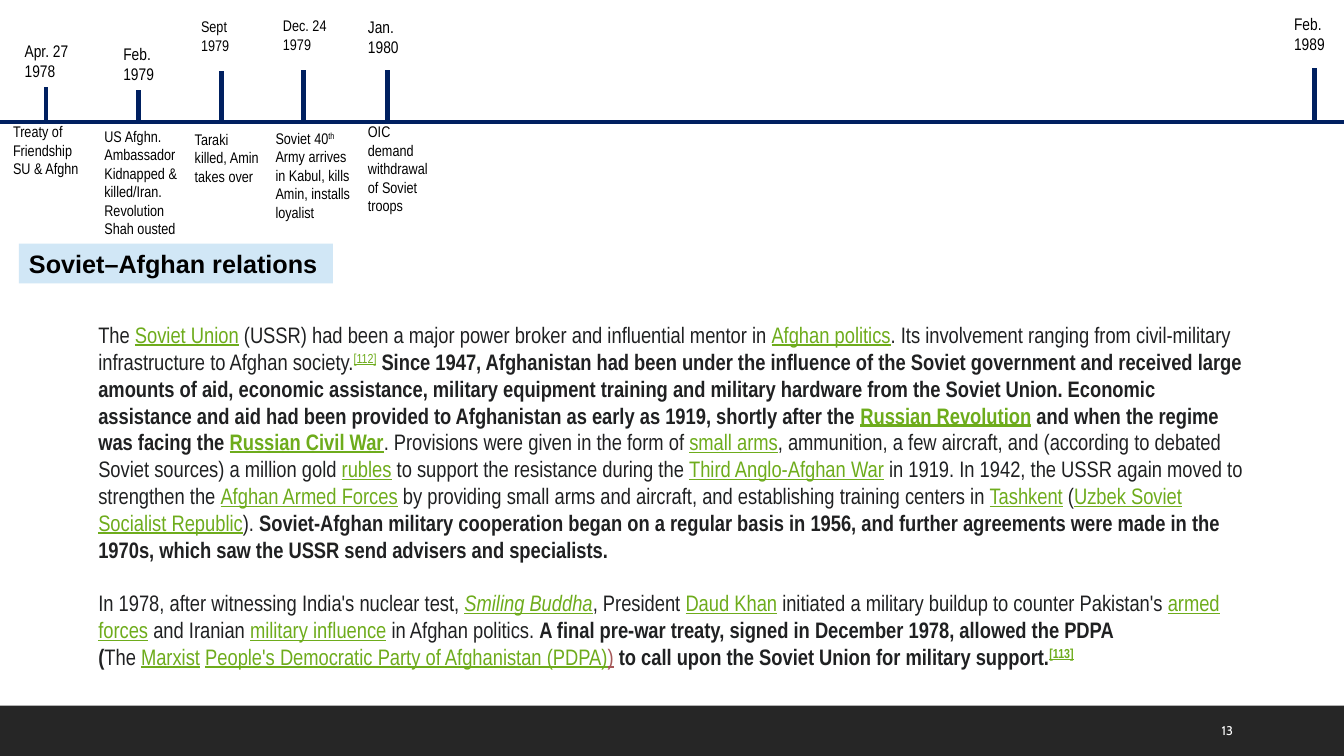
from collections import namedtuple

from lxml.etree import SubElement
from pptx import Presentation
from pptx.dml.color import RGBColor
from pptx.enum.shapes import MSO_CONNECTOR as Connector, MSO_SHAPE as Shape
from pptx.enum.text import MSO_ANCHOR as Anchor, MSO_AUTO_SIZE as AutoSize, PP_ALIGN as Align
from pptx.oxml.ns import qn
from pptx.util import Pt

PX = 9525
TIE, HARD_SPACE = "~", chr(160)
Box = namedtuple("Box", "left top width height")
Event = namedtuple("Event", "tick_x tick_top label_x label_y label_width size label "
                            "note_x note_y note_width note_lines note")

NAVY, BLACK, INK, LINK = "002060", "000000", "202122", "6EAC1C"
NARROW = "Arial Narrow"
STYLES = {
    "text": {},
    "bold": {"bold": True},
    "link": {"color": LINK, "underline": True},
    "bold link": {"color": LINK, "underline": True, "bold": True},
    "italic link": {"color": LINK, "underline": True, "italic": True},
    "visited": {"color": "A55858", "underline": True},
    "raised": {"baseline": 30000},
    "note": {"color": LINK, "underline": True, "baseline": 30000},
    "bold note": {"color": LINK, "underline": True, "bold": True, "baseline": 30000},
}

EVENTS = [
    Event(44, 83, 14, 34, 64, 12, ["Apr. 27", "1978"],
          3, 112, 96, 3, ["Treaty of Friendship", "SU & Afghn"]),
    Event(132, 86, 108, 37, 52, 12, ["Feb.", "1979"],
          90, 116, 96, 6, ["US Afghn. Ambassador",
                           "Kidnapped & killed/Iran. Revolution Shah ousted"]),
    Event(211, 68, 182, 12, 64, 11, ["Sept", "1979"],
          176, 119, 83, 3, ["Taraki killed, Amin takes over"]),
    Event(289, 67, 260, 11, 64, 11, ["Dec. 24", "1979"],
          253, 118, 97, 5, [[("text", "Soviet 40"), ("raised", "th"),
                             ("text", " Army arrives in Kabul, kills Amin, installs loyalist")]]),
    Event(369, 67, 341, 11, 58, 12, ["Jan. 1980"],
          341, 112, 83, 5, ["OIC demand withdrawal of Soviet troops"]),
    Event(1252, 65, 1223, 8, 58, 12, ["Feb.", "1989"], 0, 0, 0, 0, []),
]

ARTICLE = [
    [
        ("text", "The~"), ("link", "Soviet Union"),
        ("text", "~(USSR) had been a major power broker and influential mentor in~"),
        ("link", "Afghan politics"),
        ("text", ". Its involvement ranging from civil-military infrastructure to Afghan society."),
        ("note", "[112]"), ("text", "~"),
        ("bold", "Since 1947, Afghanistan had been under the influence of the Soviet government "
                 "and received large amounts of aid, economic assistance, military equipment "
                 "training and military hardware from the Soviet Union. Economic assistance and "
                 "aid had been provided to Afghanistan as early as 1919, shortly after the~"),
        ("bold link", "Russian Revolution"), ("bold", "~and when the regime was facing the~"),
        ("bold link", "Russian Civil War"), ("text", ". Provisions were given in the form of~"),
        ("link", "small arms"),
        ("text", ", ammunition, a few aircraft, and (according to debated Soviet sources) "
                 "a million gold~"),
        ("link", "rubles"), ("text", "~to support the resistance during the~"),
        ("link", "Third Anglo-Afghan War"),
        ("text", "~in 1919. In 1942, the USSR again moved to strengthen the~"),
        ("link", "Afghan Armed Forces"),
        ("text", "~by providing small arms and aircraft, and establishing training centers in~"),
        ("link", "Tashkent"), ("text", "~("), ("link", "Uzbek Soviet Socialist Republic"),
        ("text", "). "),
        ("bold", "Soviet-Afghan military cooperation began on a regular basis in 1956, and further "
                 "agreements were made in the 1970s, which saw the USSR send advisers and "
                 "specialists."),
    ],
    [
        ("text", "In 1978, after witnessing India's nuclear test,~"),
        ("italic link", "Smiling Buddha"), ("text", ", President~"), ("link", "Daud Khan"),
        ("text", "~initiated a military buildup to counter Pakistan's~"),
        ("link", "armed forces"), ("text", "~and Iranian~"), ("link", "military influence"),
        ("text", "~in Afghan politics. "),
        ("bold", "A final pre-war treaty, signed in December 1978, allowed the PDPA ("),
        ("text", "The~"), ("link", "Marxist"), ("text", "~"),
        ("link", "People's Democratic Party of Afghanistan (PDPA)"), ("visited", ")"),
        ("bold", " to call upon the Soviet Union for military support."),
        ("bold note", "[113]"),
    ],
]


def rgb(value):
    return RGBColor.from_string(value)


def place(shape, box):
    for name, length in box._asdict().items():
        setattr(shape, name, length * PX)


def write(shape, paragraphs, size, font=NARROW, color=BLACK, gap=0, **frame_format):
    frame = shape.text_frame
    frame_values = {"word_wrap": True, "auto_size": AutoSize.SHAPE_TO_FIT_TEXT,
                    "vertical_anchor": Anchor.TOP, **frame_format}
    for name, value in frame_values.items():
        setattr(frame, name, value)
    for index, runs in enumerate(paragraphs):
        para = frame.add_paragraph() if index else frame.paragraphs[0]
        para.alignment = Align.LEFT
        para.space_before = Pt(gap if index else 0)
        for style, text in [("text", runs)] if isinstance(runs, str) else runs:
            run = para.add_run()
            run.text = text.replace(TIE, HARD_SPACE)
            values = {"name": font, "size": Pt(size), "bold": False, **STYLES[style]}
            run.font.color.rgb = rgb(values.pop("color", color))
            baseline = values.pop("baseline", 0)
            for name, value in values.items():
                setattr(run.font, name, value)
            if baseline:
                run.font._element.set("baseline", str(baseline))


def add_text(page, box, paragraphs, size, **formats):
    shape = page.shapes.add_textbox(*(length * PX for length in box))
    write(shape, paragraphs, size, **formats)


def add_line(page, *ends):
    line = page.shapes.add_connector(Connector.STRAIGHT, *(end * PX for end in ends))
    line.line.color.rgb = rgb(NAVY)
    line.line.width = Pt(3)
    SubElement(line._element.spPr, qn("a:effectLst"))


def add_timeline(page, box):
    axis_y = box.top + 116
    add_line(page, box.left, axis_y, box.left + box.width, axis_y)
    for event in EVENTS:
        tick_x = box.left + event.tick_x
        add_line(page, tick_x, box.top + event.tick_top, tick_x, axis_y)
        label_box = Box(box.left + event.label_x, box.top + event.label_y, event.label_width, 48)
        add_text(page, label_box, event.label, event.size)
        if event.note:
            note_box = Box(box.left + event.note_x, box.top + event.note_y,
                           event.note_width, 10 + 18 * event.note_lines)
            add_text(page, note_box, event.note, 11)


def add_heading(page, box):
    title = page.shapes.title
    place(title, box)
    title.fill.solid()
    title.fill.fore_color.rgb = rgb("D1E7F6")
    write(title, [[("bold", "Soviet–Afghan relations")]], 18, font="Arial",
          auto_size=AutoSize.NONE)


def add_article(page, box):
    body = page.placeholders[1]
    place(body, box)
    write(body, ARTICLE, 16, color=INK, gap=19, auto_size=AutoSize.NONE)
    for para in body.text_frame.paragraphs:
        properties = para._p.get_or_add_pPr()
        for name in ("marL", "indent"):
            properties.set(name, "0")
        SubElement(properties, qn("a:buNone"))


def add_footer(page, box):
    bar = page.shapes.add_shape(Shape.RECTANGLE, *(length * PX for length in box))
    bar.shadow.inherit = False
    bar.fill.solid()
    bar.fill.fore_color.rgb = rgb("262626")
    bar.line.fill.background()
    number_box = Box(box.left + box.width - 126, box.top + 5, 82, 38)
    add_text(page, number_box, ["13"], 9, font="Cabin", color="FFFFFF",
             vertical_anchor=Anchor.MIDDLE, auto_size=AutoSize.NONE)


def main():
    deck = Presentation()
    deck.slide_width, deck.slide_height = 1280 * PX, 720 * PX
    page = deck.slides.add_slide(deck.slide_layouts[1])
    add_footer(page, Box(0, 672, 1280, 48))
    add_article(page, Box(84, 301, 1112, 346))
    add_heading(page, Box(18, 232, 299, 38))
    add_timeline(page, Box(0, 0, 1280, 228))
    deck.save("out.pptx")


if __name__ == "__main__":
    main()
